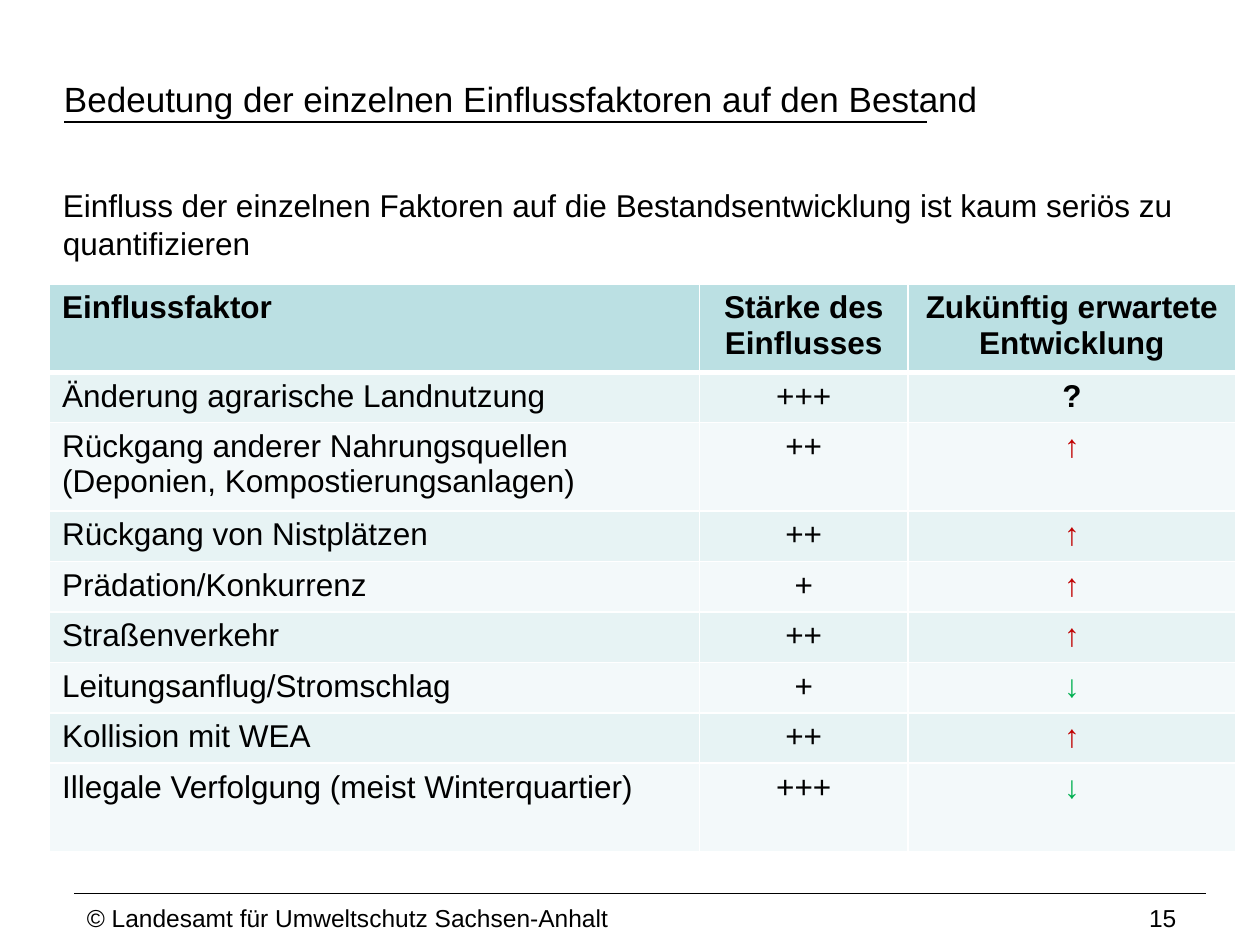
import pptx
import pptx.util
import pptx.dml.color
import pptx.enum.shapes
import pptx.enum.text
import pptx.oxml

Pt = pptx.util.Pt
ALIGN = pptx.enum.text.PP_ALIGN
ANCHOR = pptx.enum.text.MSO_ANCHOR

FONT = "Arial"
COLORS = {
    "text": "000000",
    "border": "FFFFFF",
    "header": "BBE0E3",
    "band_dark": "E7F3F4",
    "band_light": "F3F9FA",
    "up": "C00000",
    "down": "00B050",
}
OUTLOOK_COLORS = {"↑": "up", "↓": "down", "?": "text"}

HEADERS = ["Einflussfaktor", "Stärke des Einflusses", "Zukünftig erwartete Entwicklung"]
FACTORS = [
    ("Änderung agrarische Landnutzung", "+++", "?"),
    ("Rückgang anderer Nahrungsquellen (Deponien, Kompostierungsanlagen)", "++", "↑"),
    ("Rückgang von Nistplätzen", "++", "↑"),
    ("Prädation/Konkurrenz", "+", "↑"),
    ("Straßenverkehr", "++", "↑"),
    ("Leitungsanflug/Stromschlag", "+", "↓"),
    ("Kollision mit WEA", "++", "↑"),
    ("Illegale Verfolgung (meist Winterquartier)", "+++", "↓"),
]
COLUMN_WIDTHS = [371.5, 119, 187.5]
TALL_ROW, SHORT_ROW = 50.4, 28.8
TALL_ROWS = {0, 2, 8}


def rgb(name):
    return pptx.dml.color.RGBColor.from_string(COLORS[name])


def add_run(paragraph, text, size, color="text", bold=False):
    run = paragraph.add_run()
    run.text = text
    run.font.name = FONT
    run.font.size = Pt(size)
    run.font.bold = bold
    run.font.color.rgb = rgb(color)


def add_text(slide, box, text, size, wrap=True, anchor=ANCHOR.TOP):
    shape = slide.shapes.add_textbox(*map(Pt, box))
    frame = shape.text_frame
    frame.word_wrap = wrap
    frame.auto_size = pptx.enum.text.MSO_AUTO_SIZE.SHAPE_TO_FIT_TEXT
    frame.vertical_anchor = anchor
    add_run(frame.paragraphs[0], text, size)


def add_rule(slide, left, top, width, weight):
    line = slide.shapes.add_connector(
        pptx.enum.shapes.MSO_CONNECTOR.STRAIGHT, Pt(left), Pt(top), Pt(left + width), Pt(top)
    )
    line.line.color.rgb = rgb("text")
    line.line.width = Pt(weight)
    properties = line._element.spPr
    properties.append(properties.makeelement(pptx.oxml.ns.qn("a:effectLst"), {}))


def set_borders(cell, weights):
    properties = cell._tc.get_or_add_tcPr()
    for side, weight in weights.items():
        properties.append(pptx.oxml.parse_xml(
            f'<a:ln{side} {pptx.oxml.ns.nsdecls("a")} w="{Pt(weight)}"><a:solidFill>'
            f'<a:srgbClr val="{COLORS["border"]}"/></a:solidFill></a:ln{side}>'
        ))


def fill_cell(cell, text, row, column):
    is_header = row == 0
    set_borders(cell, {"L": 1, "R": 1, "T": 3 if row == 1 else 1, "B": 3 if is_header else 1})
    band = "header" if is_header else "band_dark" if row % 2 else "band_light"
    cell.fill.solid()
    cell.fill.fore_color.rgb = rgb(band)
    paragraph = cell.text_frame.paragraphs[0]
    paragraph.alignment = ALIGN.CENTER if column else ALIGN.LEFT
    add_run(paragraph, text, 18, OUTLOOK_COLORS.get(text, "text"), is_header or column == 2)


def add_factor_table(slide, left, top, width, height):
    rows = [HEADERS, *FACTORS]
    table = slide.shapes.add_table(
        len(rows), len(HEADERS), Pt(left), Pt(top), Pt(width), Pt(height)
    ).table
    for column, column_width in zip(table.columns, COLUMN_WIDTHS):
        column.width = Pt(column_width)
    for row, texts in enumerate(rows):
        table.rows[row].height = Pt(TALL_ROW if row in TALL_ROWS else SHORT_ROW)
        for column, text in enumerate(texts):
            fill_cell(table.cell(row, column), text, row, column)


def add_heading(slide, left, top, width, height):
    add_text(slide, (left, top, width, height),
             "Bedeutung der einzelnen Einflussfaktoren auf den Bestand", 20)
    add_rule(slide, left + 7.2, top + 28.8, 493.2, 1)


def add_footer(slide, left, top, width, height):
    add_rule(slide, left, top, width, 0.75)
    add_text(slide, (left, top, 314, height),
             "© Landesamt für Umweltschutz Sachsen-Anhalt", 14, False, ANCHOR.MIDDLE)
    add_text(slide, (left + 607, top, 41.8, height), "15", 14, False, ANCHOR.MIDDLE)


def main():
    presentation = pptx.Presentation()
    presentation.slide_width = Pt(720)
    presentation.slide_height = Pt(540)
    slide = presentation.slides.add_slide(presentation.slide_layouts[6])
    add_footer(slide, 42.5, 510.5, 646.5, 28)
    add_heading(slide, 29.5, 41, 557.3, 31.5)
    add_text(slide, (28.8, 103, 648.7, 51),
             "Einfluss der einzelnen Faktoren auf die Bestandsentwicklung"
             " ist kaum seriös zu quantifizieren", 18)
    add_factor_table(slide, 28.3, 162.3, sum(COLUMN_WIDTHS), 324)
    presentation.save("out.pptx")


if __name__ == "__main__":
    main()
